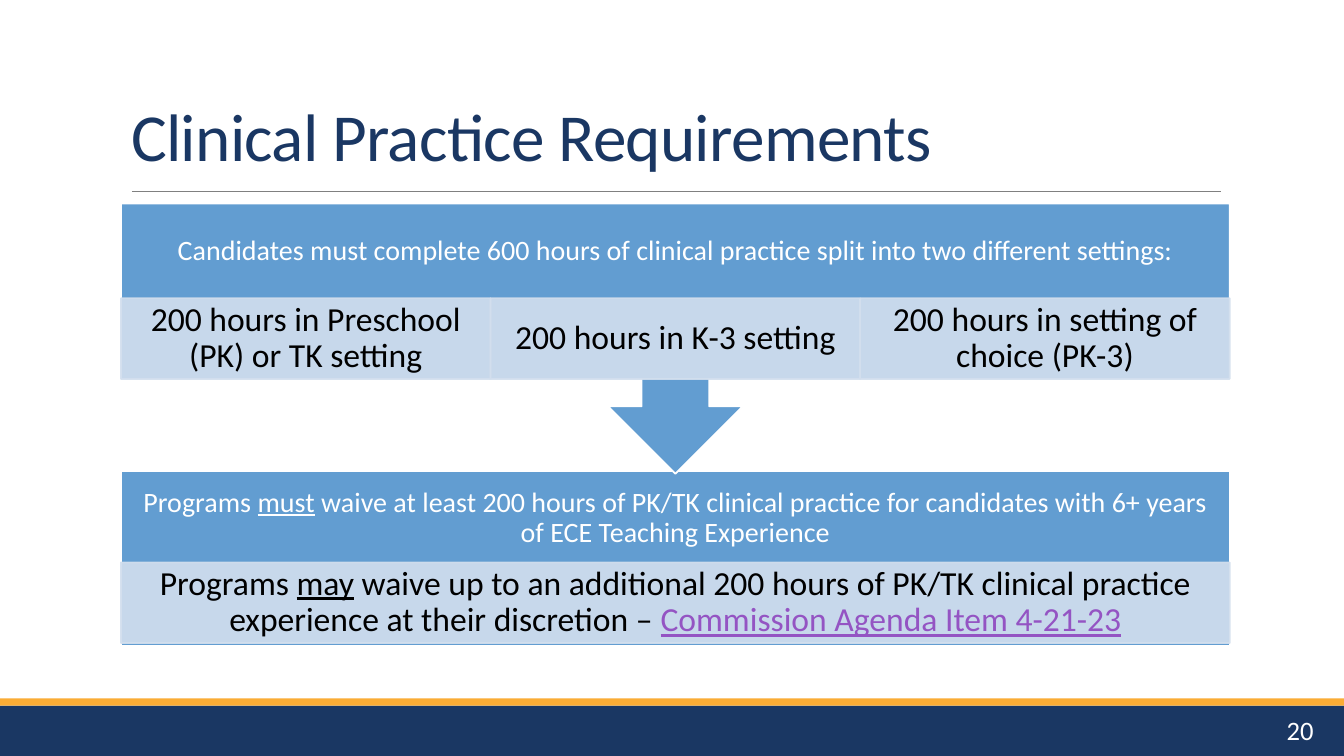
from lxml import etree
from pptx import Presentation
from pptx.dml.color import RGBColor
from pptx.enum.shapes import MSO_CONNECTOR, MSO_SHAPE as SHAPE
from pptx.enum.text import MSO_ANCHOR as ANCHOR, MSO_AUTO_SIZE, PP_ALIGN as ALIGN
from pptx.oxml.ns import qn
from pptx.util import Pt

COLORS = {
    "navy": "1A3763",
    "gold": "FAAC35",
    "gray": "808080",
    "blue": "629DD1",
    "pale": "D3DFEE",
    "white": "FFFFFF",
    "black": "000000",
    "link": "9454C3",
}
FONT = "Calibri"
LEFT, WIDTH = 86.4, 792
HEADER_HEIGHT, CELL_HEIGHT = 67.68, 57.6
HEADER_INSETS, CELL_INSETS = (11.5, 11.5), (13.7, 2.2)


def rgb(name):
    """Return the palette colour called name."""
    return RGBColor.from_string(COLORS[name])


def add_block(slide, kind, box, fill, line=None, alpha=None):
    """Add a filled preset shape, optionally outlined and translucent."""
    shape = slide.shapes.add_shape(kind, *map(Pt, box))
    shape.shadow.inherit = False
    shape.fill.solid()
    shape.fill.fore_color.rgb = rgb(fill)
    if line:
        shape.line.color.rgb = rgb(line)
        shape.line.width = Pt(1.25)
    else:
        shape.line.fill.background()
    if alpha:
        for color in shape.element.spPr.iter(qn("a:srgbClr")):
            etree.SubElement(color, qn("a:alpha")).set("val", str(alpha * 1000))
    return shape


def write_text(shape, runs, size, color, align=ALIGN.CENTER, spacing=0.9,
               anchor=ANCHOR.MIDDLE, insets=(7.2, 3.6)):
    """Fill a shape with one paragraph of (text, underlined, colour) runs."""
    frame = shape.text_frame
    frame.word_wrap = True
    frame.auto_size = MSO_AUTO_SIZE.NONE
    frame.vertical_anchor = anchor
    frame.margin_left = frame.margin_right = Pt(insets[0])
    frame.margin_top = frame.margin_bottom = Pt(insets[1])
    paragraph = frame.paragraphs[0]
    paragraph.alignment = align
    paragraph.line_spacing = spacing
    for text, underlined, run_color in runs:
        run = paragraph.add_run()
        run.text = text
        run.font.name = FONT
        run.font.size = Pt(size)
        run.font.underline = underlined
        run.font.color.rgb = rgb(run_color or color)
    return paragraph


def add_label(slide, box, runs, size, color, **layout):
    """Add a text box holding one paragraph."""
    label = slide.shapes.add_textbox(*map(Pt, box))
    write_text(label, runs, size, color, **layout)


def add_header(slide, top, runs):
    """Add the white heading across the top of a panel."""
    add_label(slide, (LEFT, top, WIDTH, HEADER_HEIGHT), runs, 20, "white",
              insets=HEADER_INSETS)


def add_cells(slide, top, cells):
    """Add a row of equal pale cells across the panel width."""
    width = WIDTH / len(cells)
    for index, runs in enumerate(cells):
        box = (LEFT + index * width, top, width, CELL_HEIGHT)
        cell = add_block(slide, SHAPE.RECTANGLE, box, "pale", "pale", alpha=90)
        write_text(cell, runs, 24, "black", insets=CELL_INSETS)


def add_frame(slide):
    """Add the footer bands, the title rule and the page number."""
    add_block(slide, SHAPE.RECTANGLE, (0, 504, 960, 36), "navy")
    add_block(slide, SHAPE.RECTANGLE, (0, 498.96, 960, 5.04), "gold")
    rule = slide.shapes.add_connector(
        MSO_CONNECTOR.STRAIGHT, Pt(94.3), Pt(136.8), Pt(871.9), Pt(136.8))
    rule.line.color.rgb = rgb("gray")
    rule.line.width = Pt(0.5)
    etree.SubElement(rule.element.spPr, qn("a:effectLst"))
    add_label(slide, (842.4, 508.3, 103, 28.8), [("20", False, None)], 19, "white",
              align=ALIGN.RIGHT)


def set_title(slide, text):
    """Place and format the title placeholder."""
    title = slide.shapes.title
    title.left, title.top, title.width, title.height = map(Pt, (LEFT, 16.56, WIDTH, 112.3))
    paragraph = write_text(title, [(text, False, None)], 48, "navy", align=ALIGN.LEFT,
                           spacing=0.85, anchor=ANCHOR.BOTTOM)
    paragraph.runs[0].font._element.set("spc", "-50")


def main():
    """Build the slide and save it."""
    presentation = Presentation()
    presentation.slide_width, presentation.slide_height = Pt(960), Pt(540)
    slide = presentation.slides.add_slide(presentation.slide_layouts[5])
    add_frame(slide)
    set_title(slide, "Clinical Practice Requirements")

    add_block(slide, SHAPE.RECTANGLE, (LEFT, 336.24, WIDTH, 125.3), "blue", "white")
    add_header(slide, 336.24, [
        ("Programs ", False, None),
        ("must", True, None),
        (" waive at least 200 hours of PK/TK clinical practice for candidates "
         "with 6+ years of ECE Teaching Experience", False, None),
    ])
    add_cells(slide, 401.76, [[
        ("Programs ", False, None),
        ("may", True, None),
        (" waive up to an additional 200 hours of PK/TK clinical practice "
         "experience at their discretion – ", False, None),
        ("Commission Agenda Item 4-21-23", True, "link"),
    ]])

    callout = add_block(slide, SHAPE.UP_ARROW_CALLOUT, (LEFT, 145.44, WIDTH, 192.96),
                        "blue", "white")
    callout.rotation = 180
    add_header(slide, 145.44, [
        ("Candidates must complete 600 hours of clinical practice split into "
         "two different settings:", False, None),
    ])
    settings = (
        "200 hours in Preschool (PK) or TK setting",
        "200 hours in K-3 setting",
        "200 hours in setting of choice (PK-3)",
    )
    add_cells(slide, 213.12, [[(setting, False, None)] for setting in settings])
    presentation.save("out.pptx")


if __name__ == "__main__":
    main()
